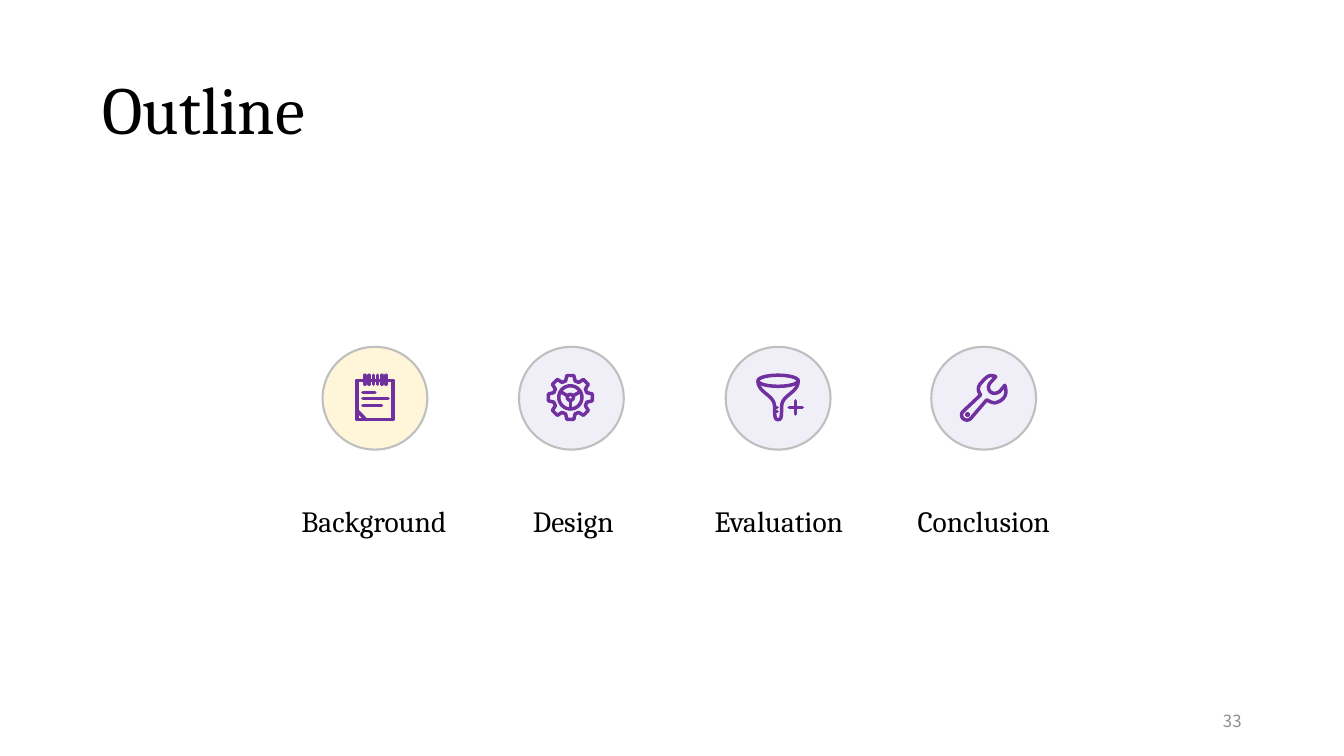
from math import cos, radians, sin

from lxml.etree import SubElement
from pptx import Presentation
from pptx.dml.color import RGBColor
from pptx.enum.shapes import MSO_SHAPE as Shape
from pptx.enum.text import MSO_ANCHOR as Anchor, MSO_AUTO_SIZE as Auto, PP_ALIGN as Align
from pptx.oxml.ns import qn
from pptx.util import Cm, Pt

COLORS = {"text": "000000", "page": "8C8C8C", "ring": "BFBFBF",
          "now": "FFC000", "later": "9E98D5", "icon": "7030A0"}
SERIF, SANS = "Cambria", "Noto Sans CJK SC"

TITLE, PAGE = "Outline", "33"
# name, circle left, label left, label width (cm), circle color
STEPS = [
    ("Background", 8.13, 7.34, 4.17, "now"),
    ("Design", 13.08, 13.13, 2.64, "later"),
    ("Evaluation", 18.29, 17.75, 3.76, "later"),
    ("Conclusion", 23.47, 22.35, 4.88, "later"),
]
RING_TOP, RING_W, RING_H = 8.74, 2.64, 2.59
LABEL_TOP, LABEL_H = 12.55, 1.14
UNIT = 0.0254  # one icon unit in cm; icon points count from the circle's centre


def arc(x, y, rx, ry, count=40):
    """Points of a closed ellipse."""
    turns = [radians(360 * i / count) for i in range(count + 1)]
    return [(x + rx * cos(t), y + ry * sin(t)) for t in turns]


def curve(a, b, c, d, count=12):
    """Points of a cubic curve from a to d."""
    steps = [i / count for i in range(count + 1)]
    return [tuple((1 - t) ** 3 * p + 3 * t * (1 - t) ** 2 * q
                  + 3 * t * t * (1 - t) * r + t ** 3 * s
                  for p, q, r, s in zip(a, b, c, d)) for t in steps]


def polar(radius, angle, x=0):
    return x + radius * cos(radians(angle)), radius * sin(radians(angle))


def notepad():
    page = [(-18, -17), (18, -17), (18, 22), (-18, 22), (-18, -17)]
    fold = [(-18, 13), (-9, 22)]
    lines = [[(-12, y), (end, y)] for y, end in ((-5, 0), (1, 13), (8, 6.5))]
    rings = [[(-10 + 4.2 * i, -22), (-10 + 4.2 * i, -13)] for i in range(6)]
    return [page, fold] + lines + rings


def gear():
    tooth = [(17, -16), (22, -9), (22, 9), (17, 16)]
    rim = [polar(r, 45 * i + a, -1) for i in range(8) for r, a in tooth]
    spokes = [[polar(3, a, -1), polar(11.5, a, -1)] for a in (90, 210, 330)]
    return [rim + rim[:1], arc(-1, 0, 11.5, 11.5), arc(-1, 0, 3, 3)] + spokes


def funnel():
    left = (curve((-20, -16), (-19.5, -4), (-3.5, -2.5), (-3.5, 9))
            + curve((-3.5, 9), (-3.5, 20), (-3, 22), (0, 22)))
    right = [(-x, y) for x, y in reversed(left)]
    ticks = [[(-3, y), (-1, y)] for y in (10, 14)]
    plus = [[(11, 10), (24, 10)], [(17.5, 3.5), (17.5, 16.5)]]
    return [arc(0, -16.5, 20, 5.5), left + right] + ticks + plus


def wrench():
    jaw = curve((7, -15), (1, -9), (8, 0), (16, -6))
    head = curve((21, -12), (25, 0), (17, 4), (11, 5.5)) + [(7, 4.5), (3, 2.5)]
    grip = curve((-12.5, 20.5), (-17, 26), (-26, 19), (-20, 13.5))
    neck = curve((-3, -2.5), (-7, -8), (-5, -12), (-2, -15))
    back = curve((-2, -15), (4, -22), (7, -23), (12, -20.5))
    body = jaw + head + grip + neck + back
    return [body + body[:1], arc(-16, 17, 0.8, 0.8, 8)]


ICONS = [notepad, gear, funnel, wrench]


def rgb(name):
    return RGBColor.from_string(COLORS[name])


def write(slide, text, box, size, font=SERIF, color="text", align=Align.LEFT):
    frame = slide.shapes.add_textbox(*map(Cm, box)).text_frame
    frame.word_wrap = True
    frame.text = text
    line = frame.paragraphs[0]
    line.alignment = align
    line.font.size, line.font.name = Pt(size), font
    line.font.color.rgb = rgb(color)
    return frame


def ring(slide, left, color):
    disc = slide.shapes.add_shape(Shape.OVAL, Cm(left), Cm(RING_TOP), Cm(RING_W), Cm(RING_H))
    disc.shadow.inherit = False
    disc.fill.solid()
    disc.fill.fore_color.rgb = rgb(color)
    tint = disc.fill._xPr.find(".//" + qn("a:srgbClr"))
    SubElement(tint, qn("a:alpha"), val="15000")
    disc.line.color.rgb = rgb("ring")
    disc.line.width = Pt(1.5)


def draw(slide, strokes, x, y):
    """Draw the strokes of one icon as a single outline centred on x, y."""
    paths = [[(Cm(x + px * UNIT), Cm(y + py * UNIT)) for px, py in s] for s in strokes]
    pen = slide.shapes.build_freeform(*paths[0][0])
    for path in paths:
        pen.move_to(*path[0])
        pen.add_line_segments(path[1:], close=False)
    icon = pen.convert_to_shape()
    icon.shadow.inherit = False
    icon.fill.background()
    icon.line.color.rgb = rgb("icon")
    icon.line.width = Pt(2.5)
    edge = icon.line._get_or_add_ln()
    edge.set("cap", "rnd")
    SubElement(edge, qn("a:round"))


def main():
    deck = Presentation()
    deck.slide_width, deck.slide_height = Cm(33.87), Cm(19.05)
    slide = deck.slides.add_slide(deck.slide_layouts[6])

    title = write(slide, TITLE, (2.33, 1.01, 29.21, 3.68), 48)
    title.vertical_anchor = Anchor.MIDDLE
    title.paragraphs[0].line_spacing = 0.9

    for (name, left, start, width, color), icon in zip(STEPS, ICONS):
        ring(slide, left, color)
        draw(slide, icon(), left + RING_W / 2, RING_TOP + RING_H / 2 - 0.02)
        label = write(slide, name, (start, LABEL_TOP, width, LABEL_H), 21, align=Align.CENTER)
        label.word_wrap = False
        label.auto_size = Auto.SHAPE_TO_FIT_TEXT

    page = write(slide, PAGE, (23.92, 17.66, 7.62, 1.01), 12, SANS, "page", Align.RIGHT)
    page.vertical_anchor = Anchor.MIDDLE
    deck.save("out.pptx")


if __name__ == "__main__":
    main()
